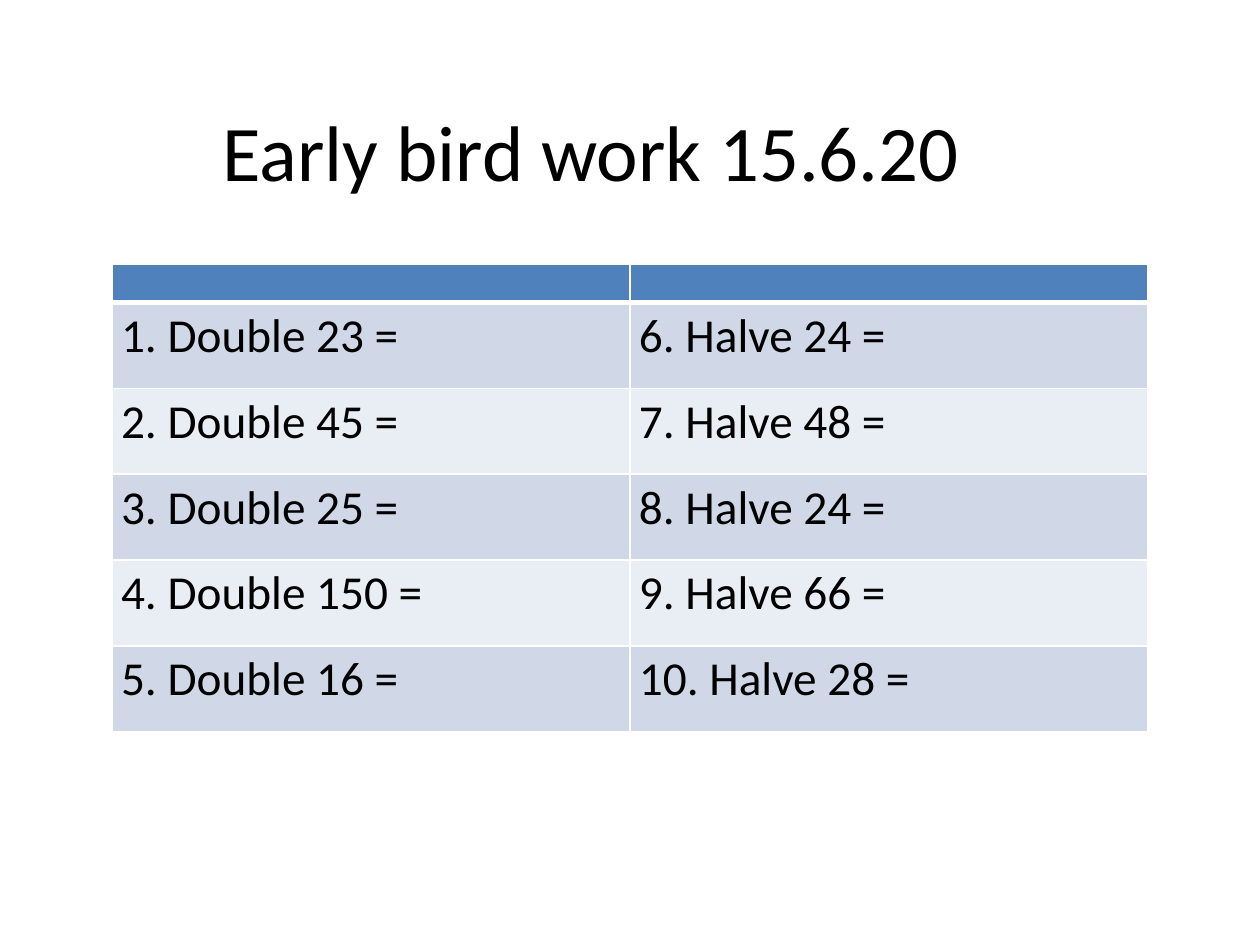
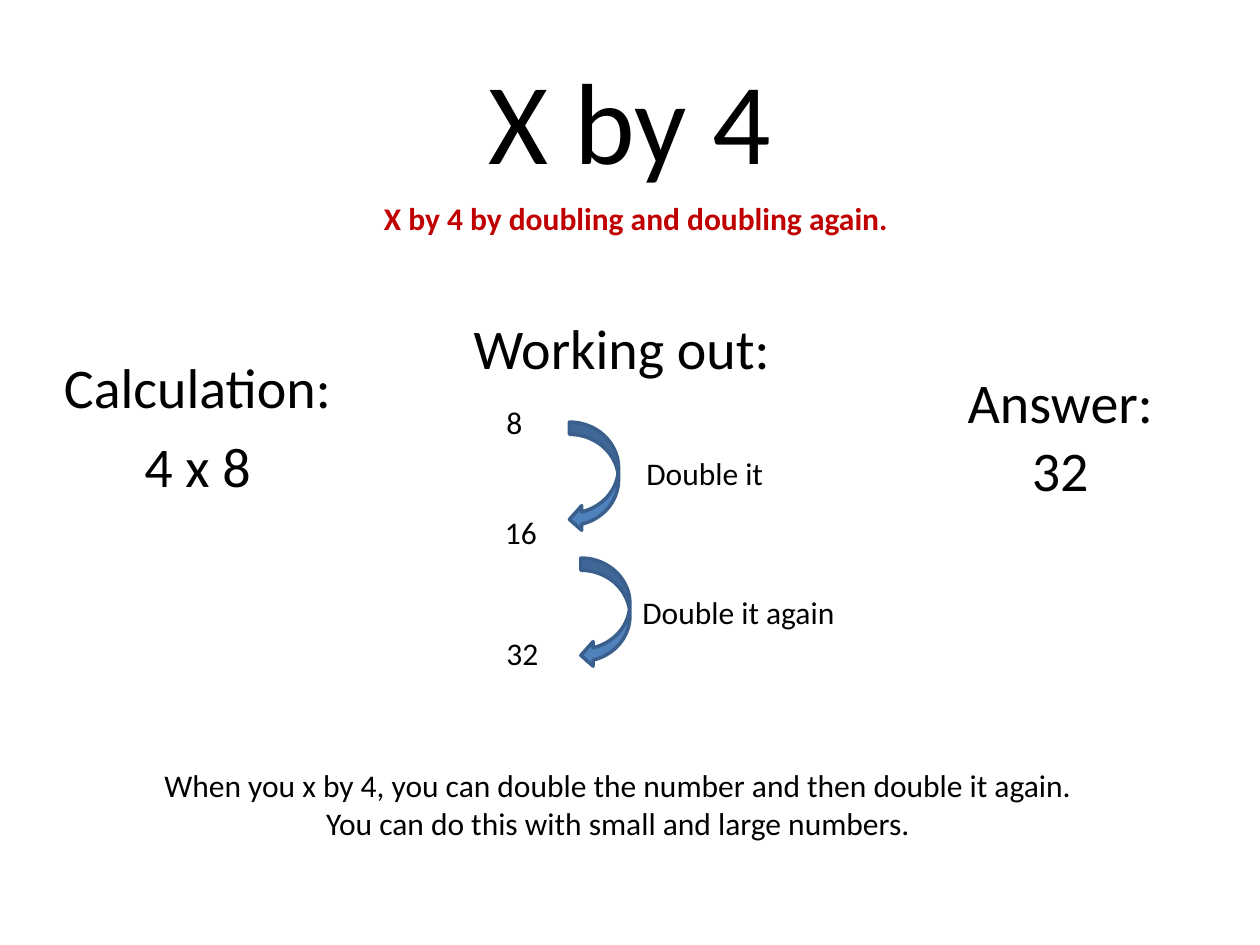
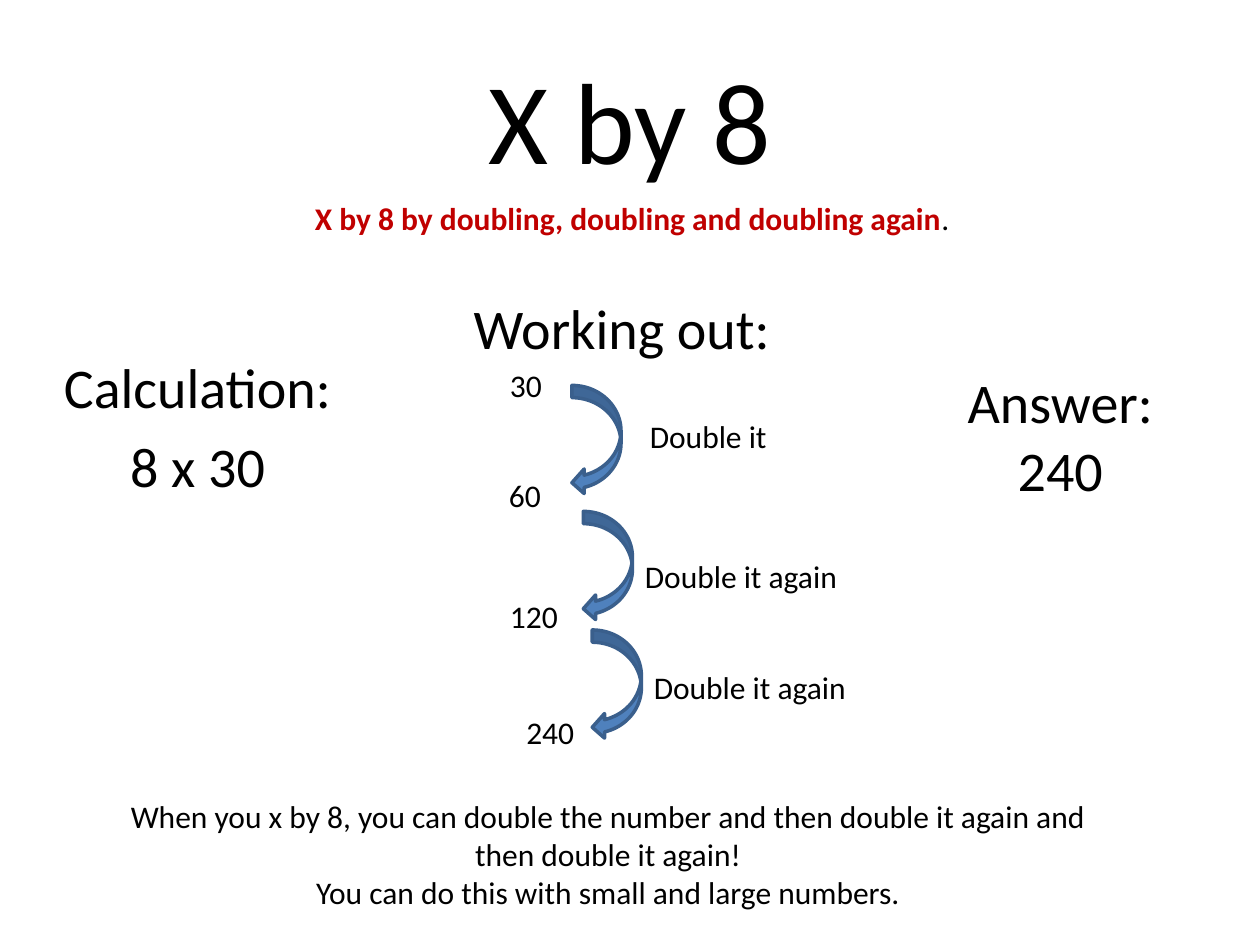
from lxml import etree
from pptx import Presentation
from pptx.dml.color import RGBColor
from pptx.enum.shapes import MSO_SHAPE
from pptx.enum.text import MSO_ANCHOR, MSO_AUTO_SIZE, PP_ALIGN
from pptx.oxml.ns import qn
from pptx.util import Cm, Pt

CENTER, LEFT = PP_ALIGN.CENTER, PP_ALIGN.LEFT
TOP, MIDDLE = MSO_ANCHOR.TOP, MSO_ANCHOR.MIDDLE
FIT_SHAPE = MSO_AUTO_SIZE.SHAPE_TO_FIT_TEXT
CURVED_ARROW = MSO_SHAPE.CURVED_LEFT_ARROW

# Shared style
FONT = "Calibri"
BLACK = RGBColor(0x00, 0x00, 0x00)
WHITE = RGBColor(0xFF, 0xFF, 0xFF)
RED = RGBColor(0xC0, 0x00, 0x00)
BLUE = RGBColor(0x4F, 0x81, 0xBD)
DARK_BLUE = RGBColor(0x3A, 0x5F, 0x8C)
BAND_DARK = RGBColor(0xD0, 0xD8, 0xE8)
BAND_LIGHT = RGBColor(0xE9, 0xED, 0xF4)
BODY_SIZE, HEADING_SIZE = 18, 32
LINE_HEIGHT, HEADING_HEIGHT = 1.02, 1.63
TITLE_BOX = (1.27, 0.81, 22.86, 3.17)


def add_run(p, text, size, color=BLACK, bold=False):
    r = p.add_run()
    r.text = text
    r.font.name = FONT
    r.font.size = Pt(size)
    r.font.bold = bold
    r.font.color.rgb = color


def add_text(s, box, lines, size=BODY_SIZE, align=LEFT, wrap=False,
             anchor=TOP, gap=0, color=BLACK, bold=False):
    """Add a text box with one paragraph per line."""
    tf = s.shapes.add_textbox(*map(Cm, box)).text_frame
    tf.word_wrap = wrap
    tf.vertical_anchor = anchor
    if not wrap:
        tf.auto_size = FIT_SHAPE
    for i, line in enumerate(lines):
        p = tf.add_paragraph() if i else tf.paragraphs[0]
        p.alignment = align
        if i and gap:
            p.space_before = Pt(gap)
        add_run(p, line, size, color, bold)
    return tf


def add_title(s, text, size=66, box=TITLE_BOX):
    return add_text(s, box, [text], size, CENTER, wrap=True, anchor=MIDDLE)


def add_arrow(s, x, y):
    sp = s.shapes.add_shape(CURVED_ARROW, Cm(x), Cm(y), Cm(0.99), Cm(2.21))
    sp.shadow.inherit = False
    sp.fill.solid()
    sp.fill.fore_color.rgb = BLUE
    sp.line.color.rgb = DARK_BLUE
    sp.line.width = Pt(2)


def style_cell(cell, color, top=1, bottom=1):
    """Give a cell white borders and a plain fill."""
    tc_pr = cell._tc.get_or_add_tcPr()
    for side, width in (("L", 1), ("R", 1), ("T", top), ("B", bottom)):
        ln = etree.SubElement(tc_pr, qn(f"a:ln{side}"), w=str(Pt(width)))
        fill = etree.SubElement(ln, qn("a:solidFill"))
        etree.SubElement(fill, qn("a:srgbClr"), val=str(WHITE))
    cell.fill.solid()
    cell.fill.fore_color.rgb = color


def set_margins(cell, x, y):
    cell.margin_left = cell.margin_right = Cm(x)
    cell.margin_top = cell.margin_bottom = Cm(y)


def add_question_table(s, rows):
    col_width, header_height, row_height = 10.44, 0.77, 1.73
    height = header_height + row_height * len(rows)
    table = s.shapes.add_table(len(rows) + 1, 2, Cm(2.26), Cm(5.33),
                               Cm(2 * col_width), Cm(height)).table
    for col in table.columns:
        col.width = Cm(col_width)
    # Empty header band
    table.rows[0].height = Cm(header_height)
    for cell in table.rows[0].cells:
        set_margins(cell, 0.18, 0)
        style_cell(cell, BLUE, bottom=3)
    # Question rows
    for i, row in enumerate(rows, start=1):
        table.rows[i].height = Cm(row_height)
        for cell, question in zip(table.rows[i].cells, row):
            set_margins(cell, 0.18, 0.1)
            style_cell(cell, BAND_DARK if i % 2 else BAND_LIGHT,
                       top=3 if i == 1 else 1)
            add_run(cell.text_frame.paragraphs[0], question, 27)


def add_working(s, y, numbers, arrows, labels):
    """Add the chain of numbers, with an arrow and a label for each step."""
    add_text(s, (9.3, y, 6.55, HEADING_HEIGHT), ["Working out:"], HEADING_SIZE)
    for x, y, number in numbers:
        width = 0.84 + 0.33 * (len(number) - 1)
        add_text(s, (x, y, width, LINE_HEIGHT), [number])
    for x, y in arrows:
        add_arrow(s, x, y)
    for i, (x, y) in enumerate(labels):
        label, width = ("Double it again", 4.45) if i else ("Double it", 2.9)
        add_text(s, (x, y, width, LINE_HEIGHT), [label])


def add_method_slide(s, title, calculation, answer):
    add_title(s, title)
    add_text(s, (-0.03, 6.99, 8.03, 3.68), ["Calculation:", calculation],
             HEADING_SIZE, CENTER, wrap=True, gap=6.4)
    add_text(s, (19.23, 7.29, 4.29, 3), ["Answer:", answer],
             HEADING_SIZE, CENTER)


def add_strategy(s, x, width, text):
    return add_text(s, (x, 3.89, width, LINE_HEIGHT), [text],
                    color=RED, bold=True)


def add_rule(s, x, y, height, rule):
    add_text(s, (x, y, 20.4, height),
             [rule, "You can do this with small and large numbers."],
             align=CENTER, wrap=True)


def main():
    prs = Presentation()
    prs.slide_width, prs.slide_height = Cm(25.4), Cm(19.05)
    early, by_four, by_eight = (
        prs.slides.add_slide(prs.slide_layouts[6]) for _ in range(3))

    # Early bird questions
    tf = add_title(early, "Early bird work 15.6.20", 45, (0.1, 1.32, 23.62, 4.5))
    tf.margin_bottom = Cm(1.22)
    doubles, halves = (23, 45, 25, 150, 16), (24, 48, 24, 66, 28)
    add_question_table(early, [
        (f"{i}. Double {d} =", f"{i + 5}. Halve {h} =")
        for i, (d, h) in enumerate(zip(doubles, halves), start=1)])

    # Multiplying by 4
    add_method_slide(by_four, "X by 4", "4 x 8", "32")
    add_strategy(by_four, 7.49, 10.74, "X by 4 by doubling and doubling again.")
    add_working(by_four, 6.2,
                [(9.96, 8, "8"), (9.93, 10.21, "16"), (9.96, 12.65, "32")],
                [(11.48, 8.51), (11.71, 11.25)],
                [(12.78, 9.02), (12.7, 11.84)])
    add_rule(by_four, 2.26, 15.32, 1.8,
             "When you x by 4, you can double the number and then double it "
             "again.")

    # Multiplying by 8
    add_method_slide(by_eight, "X by 8", "8 x 30", "240")
    tf = add_strategy(by_eight, 6.1, 13.39,
                      "X by 8 by doubling, doubling and doubling again")
    add_run(tf.paragraphs[0], ".", BODY_SIZE)
    add_working(by_eight, 5.79,
                [(10.03, 7.26, "30"), (10.01, 9.47, "60"),
                 (10.03, 11.91, "120"), (10.36, 14.25, "240")],
                [(11.53, 7.77), (11.76, 10.31), (11.94, 12.7)],
                [(12.85, 8.28), (12.75, 11.1), (12.93, 13.34)])
    add_rule(by_eight, 2.06, 15.95, 2.57,
             "When you x by 8, you can double the number and then double it "
             "again and then double it again!")

    prs.save("out.pptx")


if __name__ == "__main__":
    main()
